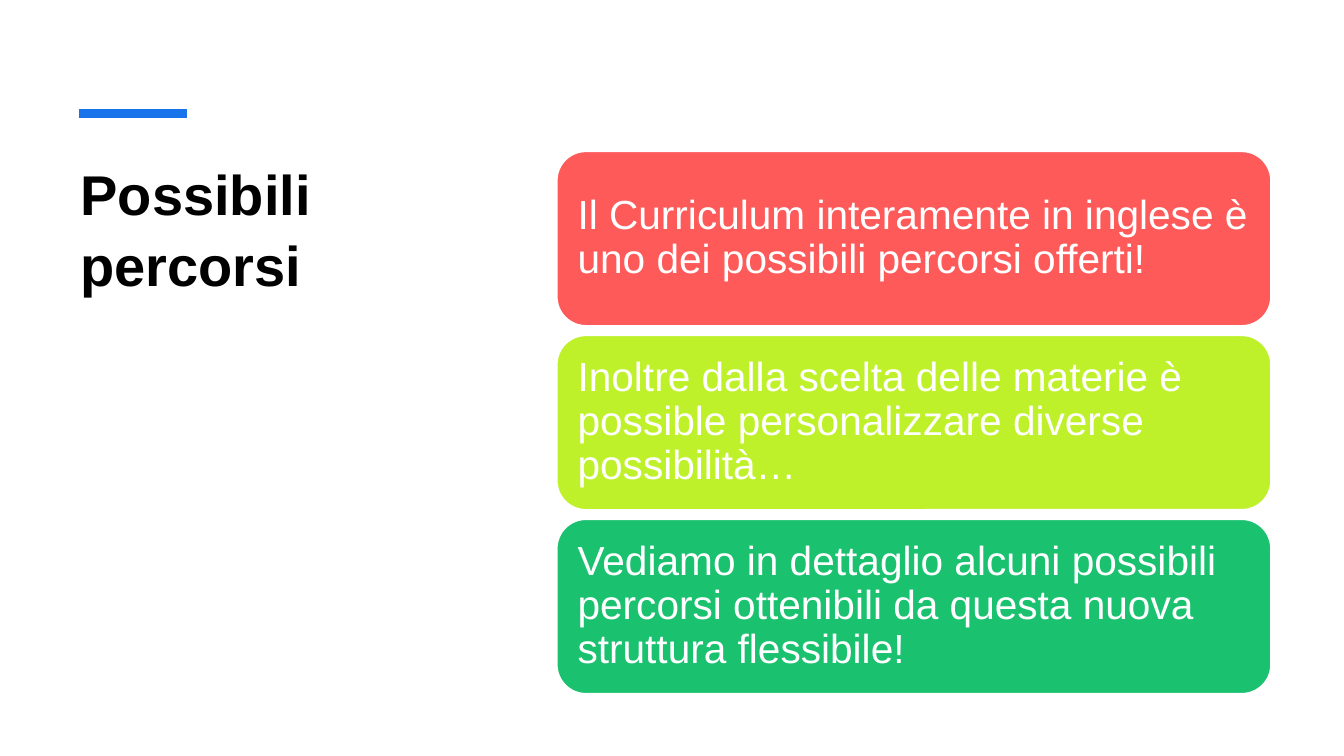
from lxml import etree
from pptx import Presentation
from pptx.dml.color import RGBColor
from pptx.enum.shapes import MSO_CONNECTOR, MSO_SHAPE
from pptx.enum.text import MSO_ANCHOR, MSO_AUTO_SIZE, PP_ALIGN
from pptx.oxml.ns import qn
from pptx.util import Pt

STRAIGHT = MSO_CONNECTOR.STRAIGHT
ROUND = MSO_SHAPE.ROUNDED_RECTANGLE
TOP, MIDDLE = MSO_ANCHOR.TOP, MSO_ANCHOR.MIDDLE
NO_FIT = MSO_AUTO_SIZE.NONE
LEFT = PP_ALIGN.LEFT

COLORS = {
    "black": "000000",
    "white": "FFFFFF",
    "blue": "1973EB",
    "red": "FE5A5A",
    "lime": "BEF129",
    "green": "1AC16E",
}

CARDS = [
    ("red", "Il Curriculum interamente in inglese è uno dei possibili percorsi offerti!"),
    ("lime", "Inoltre dalla scelta delle materie è possible personalizzare diverse possibilità…"),
    ("green", "Vediamo in dettaglio alcuni possibili percorsi ottenibili da questa nuova struttura flessibile!"),
]
CARD_TOP, CARD_STEP = 108.2, 131.4


class Deck:
    font = "Arial"

    def __init__(self, slide):
        self.slide = slide

    def color(self, name):
        return RGBColor.from_string(COLORS[name])

    def label(self, shape, text, size, color, anchor, spacing, bold=False):
        frame = shape.text_frame
        frame.text = text
        frame.word_wrap = True
        frame.auto_size = NO_FIT
        frame.vertical_anchor = anchor
        para = frame.paragraphs[0]
        para.alignment = LEFT
        para.line_spacing = spacing
        para.font.name = self.font
        para.font.size = Pt(size)
        para.font.bold = bold
        para.font.color.rgb = self.color(color)
        return frame

    def title(self, text, left, top, width, height):
        shape = self.slide.shapes.title
        shape.left, shape.top = Pt(left), Pt(top)
        shape.width, shape.height = Pt(width), Pt(height)
        self.label(shape, text, 40, "black", TOP, 1.05, bold=True)

    def rule(self, left, right, y, color, weight):
        line = self.slide.shapes.add_connector(STRAIGHT, Pt(left), Pt(y), Pt(right), Pt(y))
        line.line.color.rgb = self.color(color)
        line.line.width = Pt(weight)
        etree.SubElement(line._element.spPr, qn("a:effectLst"))

    def card(self, text, left, top, width, height, color):
        shape = self.slide.shapes.add_shape(ROUND, Pt(left), Pt(top), Pt(width), Pt(height))
        shape.shadow.inherit = False
        shape.fill.solid()
        shape.fill.fore_color.rgb = self.color(color)
        shape.line.color.rgb = self.color("white")
        shape.line.width = Pt(1)
        frame = self.label(shape, text, 29, "white", MIDDLE, 0.9)
        frame.margin_left = frame.margin_right = Pt(8.7)
        frame.margin_top = frame.margin_bottom = Pt(8.7)


def main():
    show = Presentation()
    show.slide_width, show.slide_height = Pt(960), Pt(540)
    deck = Deck(show.slides.add_slide(show.slide_layouts[5]))
    deck.title("Possibili percorsi", 50.4, 108, 289.4, 416.9)
    deck.rule(56.4, 133.4, 81.1, "blue", 6)
    for i, (color, text) in enumerate(CARDS):
        deck.card(text, 397.8, CARD_TOP + i * CARD_STEP, 510, 124.5, color)
    show.save("out.pptx")


if __name__ == "__main__":
    main()
